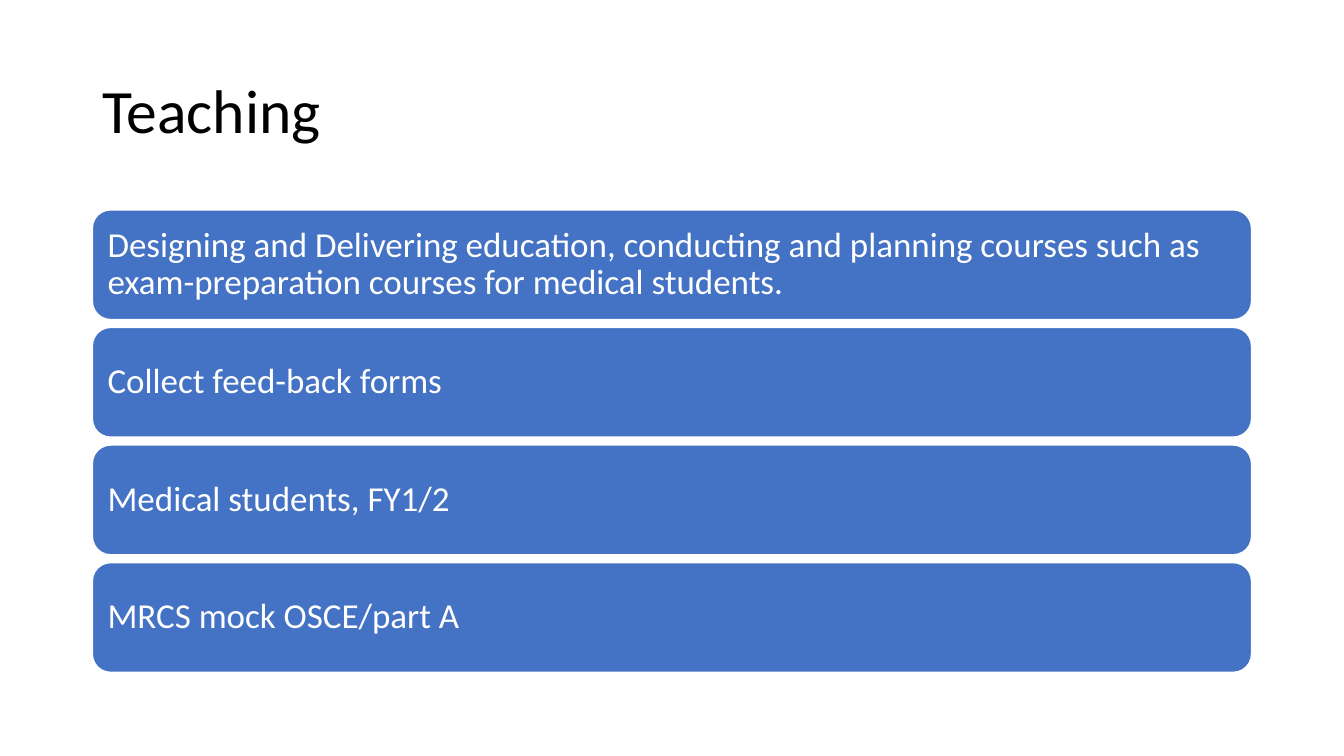
from pptx import Presentation
from pptx.dml.color import RGBColor
from pptx.enum.shapes import MSO_SHAPE
from pptx.enum.text import MSO_ANCHOR, PP_ALIGN
from pptx.util import Pt

ROUNDED = MSO_SHAPE.ROUNDED_RECTANGLE
MIDDLE = MSO_ANCHOR.MIDDLE
LEFT = PP_ALIGN.LEFT

# Content
TITLE = "Teaching"
ACTIVITIES = [
    "Designing and Delivering education, conducting and planning courses such as "
    "exam-preparation courses for medical students.",
    "Collect feed-back forms",
    "Medical students, FY1/2",
    "MRCS mock OSCE/part A",
]

# Layout in points
SLIDE_WIDTH, SLIDE_HEIGHT = 960, 540
MARGIN = 66
CONTENT_WIDTH = SLIDE_WIDTH - 2 * MARGIN
TITLE_TOP, TITLE_HEIGHT = 28.75, 104.4
BAR_TOP, BAR_HEIGHT, BAR_GAP = 149.9, 78.4, 5.6

# Style
FONT = "Calibri"
BLACK, WHITE, BLUE = "000000", "FFFFFF", "4472C4"


def color(hex_value):
    return RGBColor.from_string(hex_value)


def write_text(shape, text, *, size, hex_color, inset_x=7.2, inset_y=7.2):
    frame = shape.text_frame
    frame.word_wrap = True
    frame.vertical_anchor = MIDDLE
    frame.margin_left = frame.margin_right = Pt(inset_x)
    frame.margin_top = frame.margin_bottom = Pt(inset_y)
    paragraph = frame.paragraphs[0]
    paragraph.alignment = LEFT
    paragraph.line_spacing = 0.9
    run = paragraph.add_run()
    run.text = text
    run.font.name = FONT
    run.font.size = Pt(size)
    run.font.color.rgb = color(hex_color)


def add_bar(slide, top, text):
    bar = slide.shapes.add_shape(
        ROUNDED, Pt(MARGIN), Pt(top), Pt(CONTENT_WIDTH), Pt(BAR_HEIGHT))
    bar.shadow.inherit = False
    bar.fill.solid()
    bar.fill.fore_color.rgb = color(BLUE)
    bar.line.color.rgb = color(WHITE)
    bar.line.width = Pt(1)
    write_text(bar, text, size=25, hex_color=WHITE)


def main():
    presentation = Presentation()
    presentation.slide_width = Pt(SLIDE_WIDTH)
    presentation.slide_height = Pt(SLIDE_HEIGHT)
    slide = presentation.slides.add_slide(presentation.slide_layouts[6])

    # Title
    title = slide.shapes.add_textbox(
        Pt(MARGIN), Pt(TITLE_TOP), Pt(CONTENT_WIDTH), Pt(TITLE_HEIGHT))
    write_text(title, TITLE, size=44, hex_color=BLACK, inset_y=3.6)

    # Stacked bars
    for index, activity in enumerate(ACTIVITIES):
        add_bar(slide, BAR_TOP + index * (BAR_HEIGHT + BAR_GAP), activity)

    presentation.save("out.pptx")


if __name__ == "__main__":
    main()
